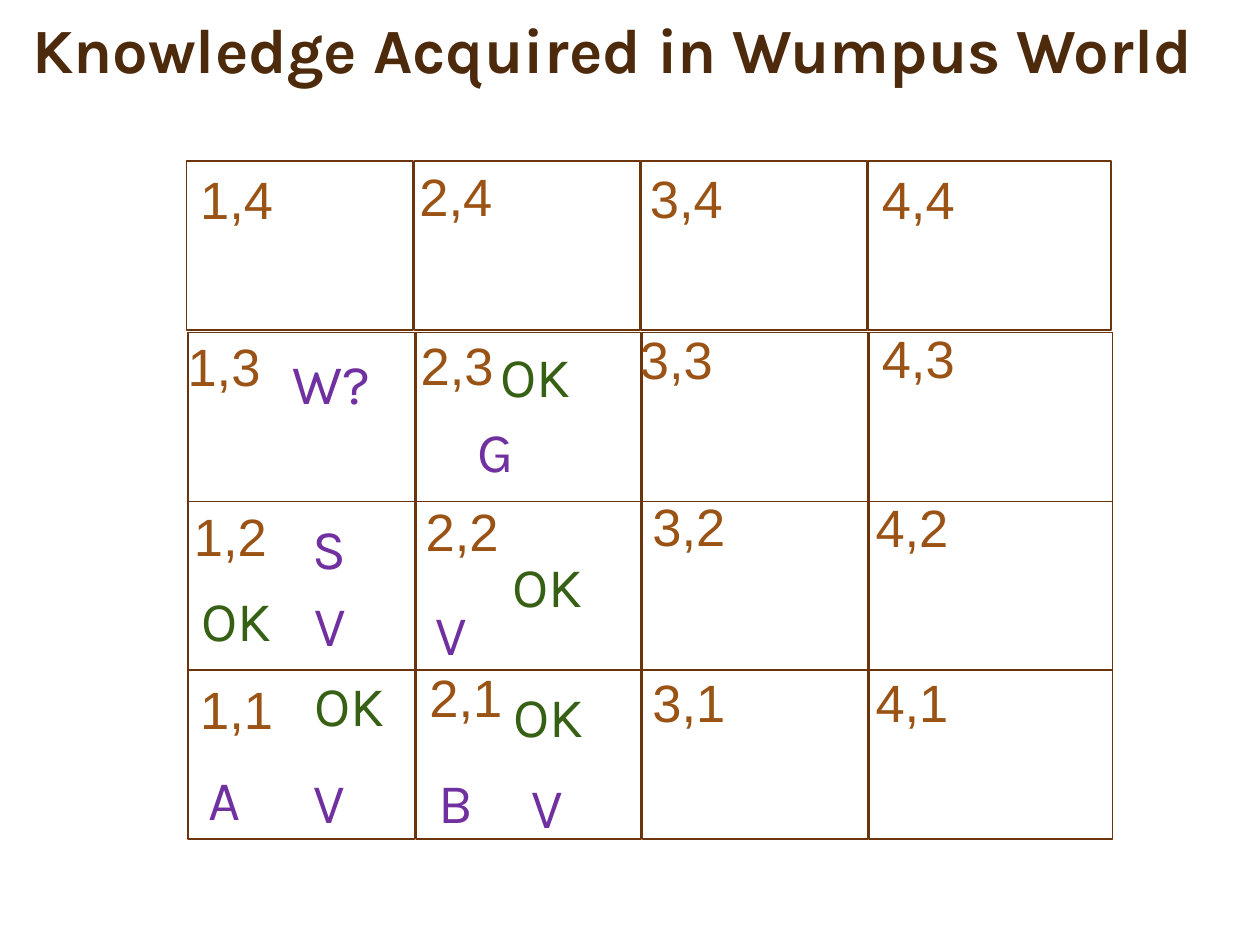
from typing import NamedTuple

from pptx import Presentation
from pptx.dml.color import RGBColor
from pptx.enum.shapes import MSO_SHAPE
from pptx.enum.text import MSO_ANCHOR, MSO_AUTO_SIZE, PP_ALIGN
from pptx.util import Inches, Pt

TITLE_COLOR = "4D2A0B"
LINE_COLOR = "6B340B"
COORDINATE_COLOR = "9A5315"
SAFE_COLOR = "366013"
PERCEPT_COLOR = "7030A0"

ROW_HEIGHT = 1.34
COLUMNS = [(1.49, 1.8), (3.3, 1.79), (5.1, 1.79), (6.9, 1.93)]  # left, width


class Row(NamedTuple):
    number: int
    top: float
    shift: float  # the top row sits slightly to the left


class Label(NamedTuple):
    text: str
    left: float
    top: float


ROWS = [Row(4, 1.28, -0.01), Row(3, 2.64, 0), Row(2, 3.98, 0), Row(1, 5.32, 0)]

COORDINATES = [
    Label("1,4", 1.49, 1.28), Label("2,4", 3.23, 1.25),
    Label("3,4", 5.06, 1.27), Label("4,4", 6.9, 1.28),
    Label("1,3", 1.39, 2.6), Label("2,3", 3.24, 2.59),
    Label("3,3", 4.98, 2.55), Label("4,3", 6.9, 2.54),
    Label("1,2", 1.44, 3.95), Label("2,2", 3.28, 3.91),
    Label("3,2", 5.08, 3.87), Label("4,2", 6.85, 3.88),
    Label("1,1", 1.49, 5.32), Label("2,1", 3.31, 5.23),
    Label("3,1", 5.08, 5.27), Label("4,1", 6.85, 5.27),
]

SAFE_MARKS = [
    Label("OK", 3.87, 2.66), Label("OK", 1.5, 4.6), Label("OK", 3.97, 4.33),
    Label("OK", 2.4, 5.27), Label("OK", 3.98, 5.36),
]

PERCEPTS = [
    Label("W?", 2.22, 2.72), Label("G", 3.69, 3.26),
    Label("S", 2.38, 4.03), Label("V", 2.4, 4.64), Label("V", 3.36, 4.71),
    Label("A", 1.56, 6.02), Label("V", 2.39, 6.04),
    Label("B", 3.38, 6.04), Label("V", 4.12, 6.08),
]
PERCEPT_WIDTHS = {"W?": 0.91, "G": 0.91}


def color(value: str) -> RGBColor:
    return RGBColor.from_string(value)


def add_text(slide, text: str, left: float, top: float, width: float, height: float, *,
             size: float, font: str, fill: str, bold: bool = False,
             align=PP_ALIGN.LEFT, line_spacing: float = 1.0,
             auto_size=MSO_AUTO_SIZE.SHAPE_TO_FIT_TEXT) -> None:
    shape = slide.shapes.add_textbox(Inches(left), Inches(top), Inches(width), Inches(height))
    frame = shape.text_frame
    frame.word_wrap = True
    frame.auto_size = auto_size
    frame.vertical_anchor = MSO_ANCHOR.TOP
    paragraph = frame.paragraphs[0]
    paragraph.alignment = align
    paragraph.line_spacing = line_spacing
    run = paragraph.add_run()
    run.text = text
    run.font.size = Pt(size)
    run.font.name = font
    run.font.bold = bold
    run.font.color.rgb = color(fill)


def add_cell(slide, left: float, top: float, width: float) -> None:
    shape = slide.shapes.add_shape(MSO_SHAPE.RECTANGLE, Inches(left), Inches(top),
                                   Inches(width), Inches(ROW_HEIGHT))
    shape.shadow.inherit = False
    shape.fill.background()
    shape.line.color.rgb = color(LINE_COLOR)
    shape.line.width = Pt(1)


def main() -> None:
    presentation = Presentation()
    presentation.slide_width = Inches(10)
    presentation.slide_height = Inches(7.5)
    slide = presentation.slides.add_slide(presentation.slide_layouts[6])

    # Title
    add_text(slide, "Knowledge Acquired in Wumpus World", 0.13, 0.1, 9.46, 1.19,
             size=36, font="Karla", fill=TITLE_COLOR, bold=True,
             align=PP_ALIGN.CENTER, line_spacing=0.9, auto_size=MSO_AUTO_SIZE.NONE)

    # Cave grid
    for row in ROWS:
        for left, width in COLUMNS:
            add_cell(slide, left + row.shift, row.top, width)

    # Square coordinates
    for label in COORDINATES:
        add_text(slide, *label, 0.79, 0.61, size=30, font="Arial", fill=COORDINATE_COLOR)

    # Squares known to be safe
    for label in SAFE_MARKS:
        add_text(slide, *label, 0.99, 0.64, size=32, font="Karla", fill=SAFE_COLOR)

    # Agent, visited squares, percepts and suspicions
    for label in PERCEPTS:
        add_text(slide, *label, PERCEPT_WIDTHS.get(label.text, 0.55), 0.64,
                 size=32, font="Karla", fill=PERCEPT_COLOR)

    presentation.save("out.pptx")


if __name__ == "__main__":
    main()
